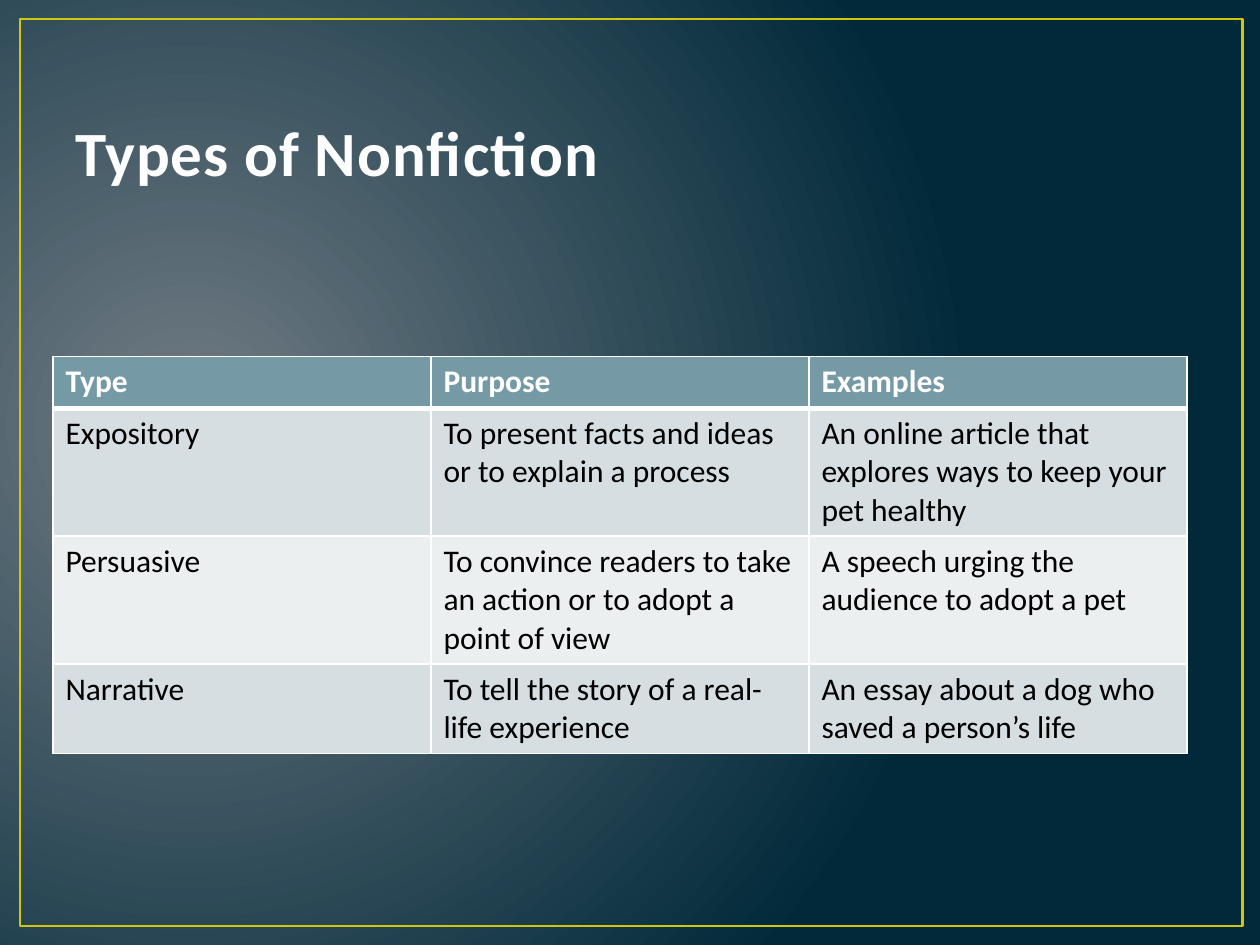
from dataclasses import dataclass

from lxml.etree import SubElement
from pptx import Presentation
from pptx.dml.color import RGBColor
from pptx.enum.shapes import MSO_SHAPE
from pptx.enum.text import MSO_ANCHOR, PP_ALIGN
from pptx.oxml import parse_xml
from pptx.oxml.ns import nsdecls, qn
from pptx.util import Inches, Pt


@dataclass(frozen=True)
class Theme:
    font: str = "Calibri"
    title_size: float = 36
    table_size: float = 18
    title: str = "FEFEFE"
    title_outline: str = "384F55"
    glow: str = "717C84"
    deep: str = "01293A"
    frame: str = "CFC60D"
    header: str = "759AA5"
    bands: tuple[str, str] = ("D6DEE1", "ECEFF0")
    white: str = "FFFFFF"
    ink: str = "000000"


@dataclass(frozen=True)
class Nonfiction:
    kind: str
    purpose: str
    examples: str

    def texts(self) -> tuple[str, str, str]:
        return self.kind, self.purpose, self.examples


THEME = Theme()
WIDTH, HEIGHT = Inches(10), Inches(7.5)
COLUMN, ROW = Inches(3), Inches(0.41)
THIN, THICK = 1, 3

ROWS = [
    Nonfiction("Type", "Purpose", "Examples"),
    Nonfiction("Expository", "To present facts and ideas or to explain a process",
               "An online article that explores ways to keep your pet healthy"),
    Nonfiction("Persuasive",
               "To convince readers to take an action or to adopt a point of view",
               "A speech urging the audience to adopt a pet"),
    Nonfiction("Narrative", "To tell the story of a real-life experience",
               "An essay about a dog who saved a person’s life"),
]


def line_xml(tag: str, points: float, color: str):
    return parse_xml(
        f'<a:{tag} {nsdecls("a")} w="{Pt(points)}"><a:solidFill>'
        f'<a:srgbClr val="{color}"/></a:solidFill></a:{tag}>')


def add_span(para, text: str, size: float, color: str, bold: bool):
    span = para.add_run()
    span.text = text
    span.font.name = THEME.font
    span.font.size = Pt(size)
    span.font.bold = bold
    span.font.color.rgb = RGBColor.from_string(color)
    return span


def paint_background(page) -> None:
    fill = page.background.fill
    fill.gradient()
    for stop, position, color in zip(fill.gradient_stops, (0, 1), (THEME.glow, THEME.deep)):
        stop.position = position
        stop.color.rgb = RGBColor.from_string(color)
    # Radial glow from the left side instead of a linear blend
    gradient = next(page.background._cSld.iter(qn("a:gradFill")))
    gradient.remove(gradient.find(qn("a:lin")))
    circle = SubElement(gradient, qn("a:path"), {"path": "circle"})
    SubElement(circle, qn("a:fillToRect"),
               {"l": "15000", "t": "50000", "r": "85000", "b": "60000"})


def draw_frame(page) -> None:
    box = page.shapes.add_shape(
        MSO_SHAPE.RECTANGLE, Inches(0.16), Inches(0.15), Inches(9.7), Inches(7.2))
    box.shadow.inherit = False
    box.fill.background()
    box.line.color.rgb = RGBColor.from_string(THEME.frame)
    box.line.width = Pt(1.5)


def write_title(page, text: str) -> None:
    box = page.shapes.title
    box.left, box.top = int(WIDTH * 0.05), int(HEIGHT * 0.04)
    box.width, box.height = int(WIDTH * 0.9), Inches(1.25)
    box.text_frame.vertical_anchor = MSO_ANCHOR.BOTTOM
    para = box.text_frame.paragraphs[0]
    para.alignment = PP_ALIGN.LEFT
    span = add_span(para, text, THEME.title_size, THEME.title, True)
    # Letter spacing and a fine outline
    properties = span.font._element
    properties.set("spc", "50")
    properties.insert(0, line_xml("ln", 1.05, THEME.title_outline))


def format_cell(cell, text: str, row: int) -> None:
    is_header = row == 0
    fill = THEME.header if is_header else THEME.bands[(row - 1) % 2]
    cell.fill.solid()
    cell.fill.fore_color.rgb = RGBColor.from_string(fill)
    add_span(cell.text_frame.paragraphs[0], text, THEME.table_size,
             THEME.white if is_header else THEME.ink, is_header)
    # The rule under the header is shared with the first body row
    borders = {"lnL": THIN, "lnR": THIN,
               "lnT": THICK if row == 1 else THIN,
               "lnB": THICK if is_header else THIN}
    properties = cell._tc.get_or_add_tcPr()
    for index, (side, points) in enumerate(borders.items()):
        properties.insert(index, line_xml(side, points, THEME.white))


def draw_table(page, rows: list[Nonfiction]) -> None:
    columns = len(rows[0].texts())
    frame = page.shapes.add_table(len(rows), columns, Inches(0.42), Inches(2.83),
                                  COLUMN * columns, ROW * len(rows))
    for row, entry in enumerate(rows):
        for column, text in enumerate(entry.texts()):
            format_cell(frame.table.cell(row, column), text, row)
    # Rows grow with their text
    frame.height = Inches(3.11)


def main() -> None:
    deck = Presentation()
    deck.slide_width, deck.slide_height = WIDTH, HEIGHT
    page = deck.slides.add_slide(deck.slide_layouts[5])
    paint_background(page)
    draw_frame(page)
    write_title(page, "Types of Nonfiction")
    draw_table(page, ROWS)
    deck.save("out.pptx")


if __name__ == "__main__":
    main()
